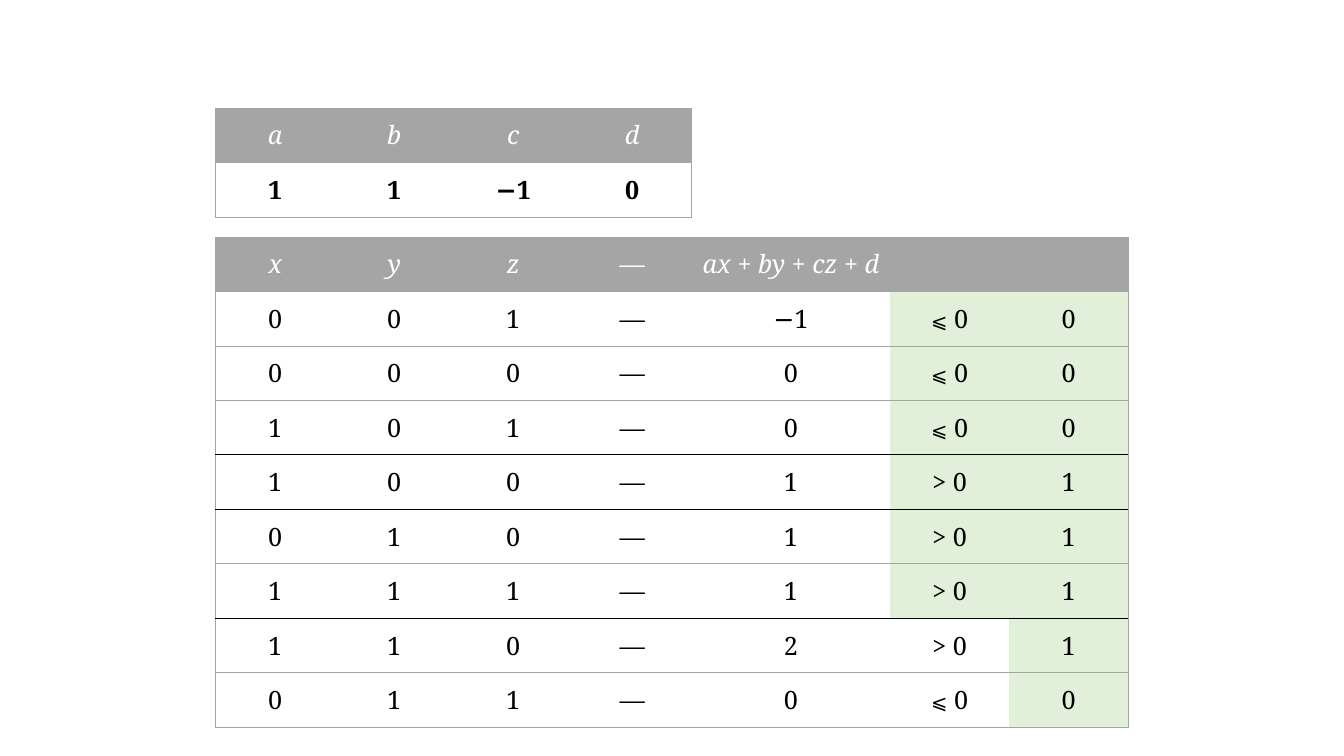
from lxml.etree import SubElement
from pptx import Presentation
from pptx.dml.color import RGBColor
from pptx.enum.text import MSO_ANCHOR, PP_ALIGN
from pptx.oxml.ns import qn
from pptx.util import Inches, Pt

COLORS = {"grey": "A5A5A5", "green": "E2F0D9", "black": "000000", "white": "FFFFFF"}
NARROW, WIDE, ROW_HEIGHT, INSET = 1.18, 1.97, 0.41, 0.1
THIN, STRONG = ("grey", 0.5), ("black", 1)
UPRIGHT = {"italic": False}
FORMULA = [("ax", {}), (" + ", UPRIGHT), ("by", {}), (" + ", UPRIGHT),
           ("cz", {}), (" + ", UPRIGHT), ("d", {})]
AT_MOST_ZERO = [("⩽", {"size": 14}), (" 0", {})]
ABOVE_ZERO = "> 0"
COEFFICIENTS = [["a", "b", "c", "d"], ["1", "1", "−1", "0"]]
POINTS = [("001", -1), ("000", 0), ("101", 0), ("100", 1),
          ("010", 1), ("111", 1), ("110", 2), ("011", 0)]
STRONG_BELOW = {3, 4, 6}
LAST_GREEN_SIGN_ROW = 6


def write(cell, text, **style):
    paragraph = cell.text_frame.paragraphs[0]
    paragraph.alignment = PP_ALIGN.CENTER
    runs = [(text, {})] if isinstance(text, str) else text
    for words, changes in runs:
        look = {"size": 18, "color": "black", "bold": False, "italic": False, **style, **changes}
        run = paragraph.add_run()
        run.text = words
        run.font.name = "Noto Serif"
        run.font.size = Pt(look["size"])
        run.font.bold = look["bold"]
        run.font.italic = look["italic"]
        run.font.color.rgb = RGBColor.from_string(COLORS[look["color"]])


def draw_borders(cell, **borders):
    properties = cell._tc.get_or_add_tcPr()
    for side in ("L", "R", "T", "B"):
        border = borders.get(side)
        line = SubElement(properties, qn(f"a:ln{side}"))
        if border:
            color, width = border
            line.set("w", str(Pt(width)))
            solid = SubElement(line, qn("a:solidFill"))
            SubElement(solid, qn("a:srgbClr")).set("val", COLORS[color])
        else:
            SubElement(line, qn("a:noFill"))


def fill_cell(cell, color):
    if color:
        cell.fill.solid()
        cell.fill.fore_color.rgb = RGBColor.from_string(COLORS[color])
    else:
        cell.fill.background()


def add_grid(slide, top, widths, rows, strong_below=(), is_green=lambda row, column: False, bold=False):
    grid = slide.shapes.add_table(
        len(rows), len(widths), Inches(2.14), Inches(top),
        Inches(sum(widths)), Inches(ROW_HEIGHT * len(rows))).table
    grid.horz_banding = False
    for column, width in zip(grid.columns, widths):
        column.width = Inches(width)
    for r, texts in enumerate(rows):
        grid.rows[r].height = Inches(ROW_HEIGHT)
        for c, text in enumerate(texts):
            cell = grid.cell(r, c)
            cell.margin_left = cell.margin_right = Inches(INSET)
            cell.margin_top = cell.margin_bottom = Inches(INSET)
            cell.vertical_anchor = MSO_ANCHOR.MIDDLE
            draw_borders(
                cell,
                L=THIN if c == 0 else None,
                R=THIN if c == len(widths) - 1 else None,
                T=STRONG if r - 1 in strong_below else THIN,
                B=STRONG if r in strong_below else THIN)
            if r == 0:
                fill_cell(cell, "grey")
                if text:
                    write(cell, text, color="white", italic=True)
            else:
                fill_cell(cell, "green" if is_green(r, c) else None)
                write(cell, text, bold=bold)


def point_row(bits, value):
    positive = value > 0
    return [*bits, "—", str(value).replace("-", "−"),
            ABOVE_ZERO if positive else AT_MOST_ZERO, str(int(positive))]


def main():
    presentation = Presentation()
    presentation.slide_width = Inches(13.33)
    presentation.slide_height = Inches(7.5)
    slide = presentation.slides.add_slide(presentation.slide_layouts[6])
    truth_rows = [["x", "y", "z", "—", FORMULA, "", ""]]
    truth_rows += [point_row(bits, value) for bits, value in POINTS]
    add_grid(slide, 2.35, [NARROW] * 4 + [WIDE] + [NARROW] * 2, truth_rows,
             strong_below=STRONG_BELOW,
             is_green=lambda row, column: column == 6 or column == 5 and row <= LAST_GREEN_SIGN_ROW)
    add_grid(slide, 1.07, [NARROW] * 4, COEFFICIENTS, bold=True)
    presentation.save("out.pptx")


if __name__ == "__main__":
    main()
